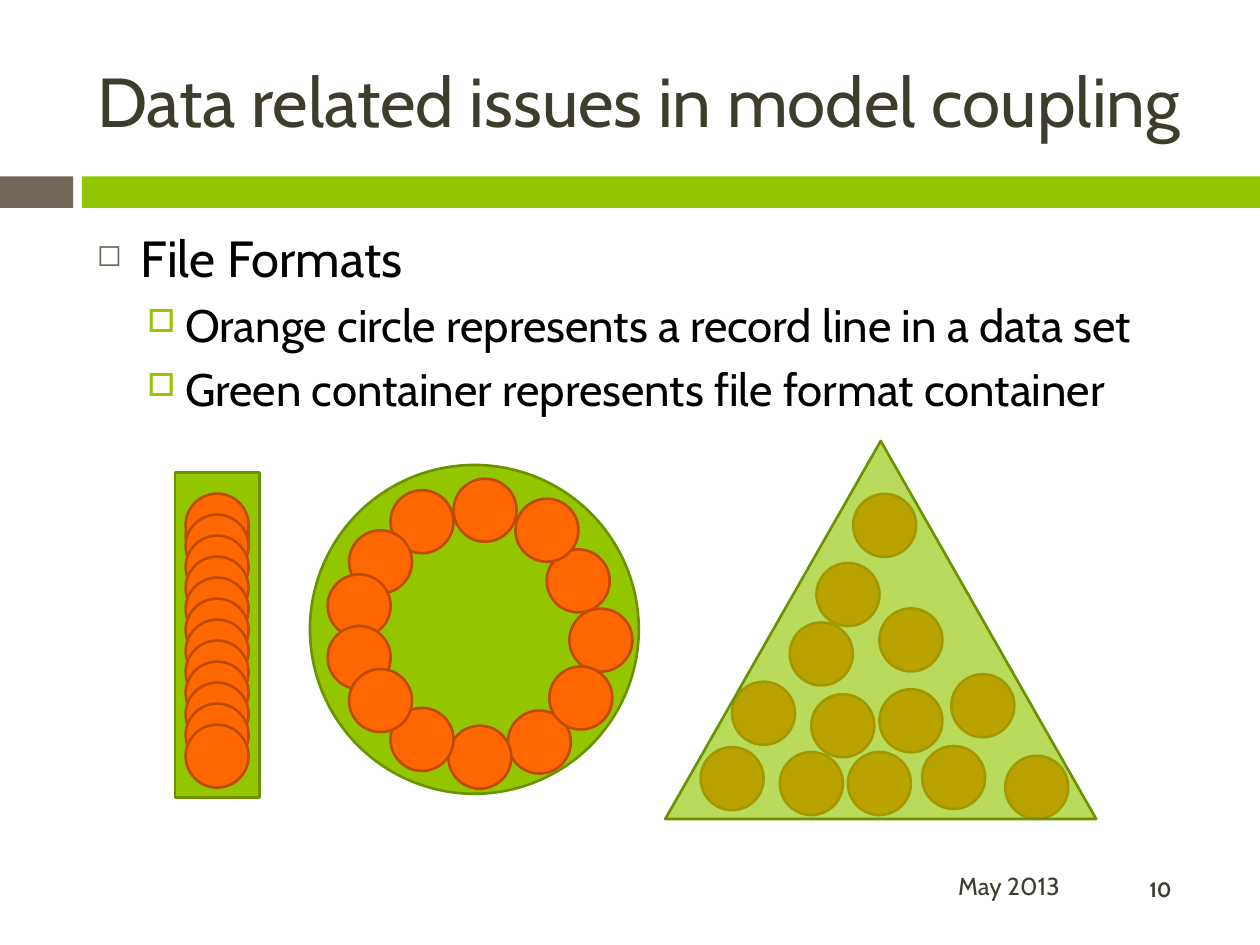
from collections import namedtuple
from dataclasses import dataclass

from lxml import etree
from pptx import Presentation
from pptx import util as u
from pptx.dml.color import RGBColor
from pptx.enum import shapes, text
from pptx.oxml.ns import qn

Box = namedtuple("Box", "left top width height")
Kind = shapes.MSO_SHAPE


@dataclass(frozen=True)
class Theme:
    """Colours, type sizes and measures of the deck."""
    font: str = "Cabin"
    ink: str = "3E3D2D"
    black: str = "000000"
    stone: str = "71685A"
    green: str = "94C600"
    green_edge: str = "6D9200"
    orange: str = "FF6700"
    orange_edge: str = "BD4C00"
    title: float = 39.6
    heading: float = 29
    item: float = 26
    date: float = 14
    number: float = 11.9
    edge: float = 1.5
    record: float = 0.5


THEME = Theme()
STACK = [(12.5, 9.7)] + [(12.5, 6.5 + 6.46 * row) for row in range(12)]
RING = [(78.9, 43.7), (60.2, 74.7), (72.8, 61.3), (42.1, 79.3), (24.5, 73.9),
        (72, 25.7), (62.5, 10.3), (43.7, 4.2), (24.5, 7.7), (11.9, 19.9),
        (5.4, 33.3), (5.4, 49), (11.9, 62.1)]
PILE = [(49.7, 65.7), (78.9, 83.3), (59.6, 80.7), (42.4, 82.3), (26.6, 82.3),
        (49.7, 44.3), (66.4, 61.7), (43.6, 14), (35.1, 32.3), (28.9, 48),
        (33.9, 67), (8.2, 81), (15.5, 63.7)]


def inches(box):
    """Convert a box in inches to slide lengths."""
    return [u.Inches(length) for length in box]


def add_solid(parent, kind, box, fill, edge=None):
    """Add a flat preset shape, outlined when an edge colour is given."""
    shape = parent.shapes.add_shape(kind, *inches(box))
    shape.shadow.inherit = False
    shape.fill.solid()
    shape.fill.fore_color.rgb = RGBColor.from_string(fill)
    if edge:
        shape.line.color.rgb = RGBColor.from_string(edge)
        shape.line.width = u.Pt(THEME.edge)
    else:
        shape.line.fill.background()
    return shape


def style(para, size, colour, bold=False):
    """Format every run of a paragraph."""
    for span in para.runs:
        span.font.name = THEME.font
        span.font.size = u.Pt(size)
        span.font.bold = bold
        span.font.color.rgb = RGBColor.from_string(colour)


def add_line(page, box, words, size, align, bold=False):
    """Add a vertically centred line of small text."""
    frame = page.shapes.add_textbox(*inches(box)).text_frame
    frame.word_wrap = True
    frame.vertical_anchor = text.MSO_ANCHOR.MIDDLE
    para = frame.paragraphs[0]
    para.text = words
    para.alignment = align
    style(para, size, THEME.ink, bold)


def set_bullet(para, sign, colour, percent, margin, hang):
    """Give a paragraph a hanging coloured bullet."""
    props = para._p.get_or_add_pPr()
    props.set("marL", str(u.Inches(margin)))
    props.set("indent", str(-u.Inches(hang)))
    tint = etree.SubElement(props, qn("a:buClr"))
    etree.SubElement(tint, qn("a:srgbClr"), val=colour)
    etree.SubElement(props, qn("a:buSzPct"), val=str(percent * 1000))
    etree.SubElement(props, qn("a:buChar"), char=sign)


def add_band(page, box):
    """Draw the two-part band below the title."""
    tab, gap = 0.58, 0.07
    add_solid(page, Kind.RECTANGLE, box._replace(width=tab), THEME.stone)
    rest = box._replace(left=box.left + tab + gap, width=box.width - tab - gap)
    add_solid(page, Kind.RECTANGLE, rest, THEME.green)


def add_title(page, box, words):
    """Place and format the title placeholder."""
    title = page.shapes.title
    title.left, title.top, title.width, title.height = inches(box)
    frame = title.text_frame
    frame.text = words
    frame.word_wrap = True
    frame.auto_size = text.MSO_AUTO_SIZE.NONE
    frame.vertical_anchor = text.MSO_ANCHOR.MIDDLE
    frame.paragraphs[0].alignment = text.PP_ALIGN.LEFT
    style(frame.paragraphs[0], THEME.title, THEME.ink)


def add_body(page, box, heading, items):
    """Write a heading with its bulleted items."""
    frame = page.shapes.add_textbox(*inches(box)).text_frame
    frame.word_wrap = True
    for index, words in enumerate([heading, *items]):
        para = frame.add_paragraph() if index else frame.paragraphs[0]
        para.text = words
        para.level = 1 if index else 0
        para.space_before = u.Pt(5.5 if index else 7)
        style(para, THEME.item if index else THEME.heading, THEME.black)
        if index:
            set_bullet(para, "□", THEME.green, 70, 0.7, 0.3)
        else:
            set_bullet(para, "◻", THEME.stone, 60, 0.35, 0.35)


def add_container(group, kind, box):
    """Draw a green file format container."""
    return add_solid(group, kind, box, THEME.green, THEME.green_edge)


def add_records(group, box, places):
    """Draw record circles at percentages of the container box."""
    for across, down in places:
        spot = Box(box.left + box.width * across / 100,
                   box.top + box.height * down / 100,
                   THEME.record, THEME.record)
        add_solid(group, Kind.OVAL, spot, THEME.orange, THEME.orange_edge)


def add_filled_container(page, kind, box, places):
    """Draw a container with its records in front."""
    group = page.shapes.add_group_shape()
    add_container(group, kind, box)
    add_records(group, box, places)


def add_veiled_container(page, kind, box, places, opacity):
    """Draw records behind a translucent container."""
    group = page.shapes.add_group_shape()
    add_records(group, box, places)
    veil = add_container(group, kind, box)
    colour = veil._element.spPr.find(qn("a:solidFill"))[0]
    etree.SubElement(colour, qn("a:alpha"), val=str(opacity * 1000))


def add_footer(page, date_box, number_box, date, number):
    """Write the date and the page number."""
    add_line(page, date_box, date, THEME.date, text.PP_ALIGN.RIGHT)
    add_line(page, number_box, number, THEME.number, text.PP_ALIGN.CENTER, True)


def main():
    """Build and save the slide."""
    deck = Presentation()
    deck.slide_width, deck.slide_height = u.Inches(10), u.Inches(7.5)
    page = deck.slides.add_slide(deck.slide_layouts[5])
    add_band(page, Box(0, 1.4, 10, 0.25))
    add_title(page, Box(0.67, 0.25, 8.92, 1.08), "Data related issues in model coupling")
    add_footer(page, Box(2.58, 6.83, 5.93, 0.4), Box(8.92, 6.92, 0.58, 0.27),
               "May 2013", "10")
    add_body(page, Box(0.67, 1.75, 8.92, 4.92), "File Formats",
             ["Orange circle represents a record line in a data set",
              "Green container represents file format container"])
    add_filled_container(page, Kind.RECTANGLE, Box(1.39, 3.75, 0.67, 2.58), STACK)
    add_filled_container(page, Kind.OVAL, Box(2.46, 3.69, 2.61, 2.61), RING)
    add_veiled_container(page, Kind.ISOSCELES_TRIANGLE, Box(5.28, 3.5, 3.42, 3), PILE, 64)
    deck.save("out.pptx")


if __name__ == "__main__":
    main()
